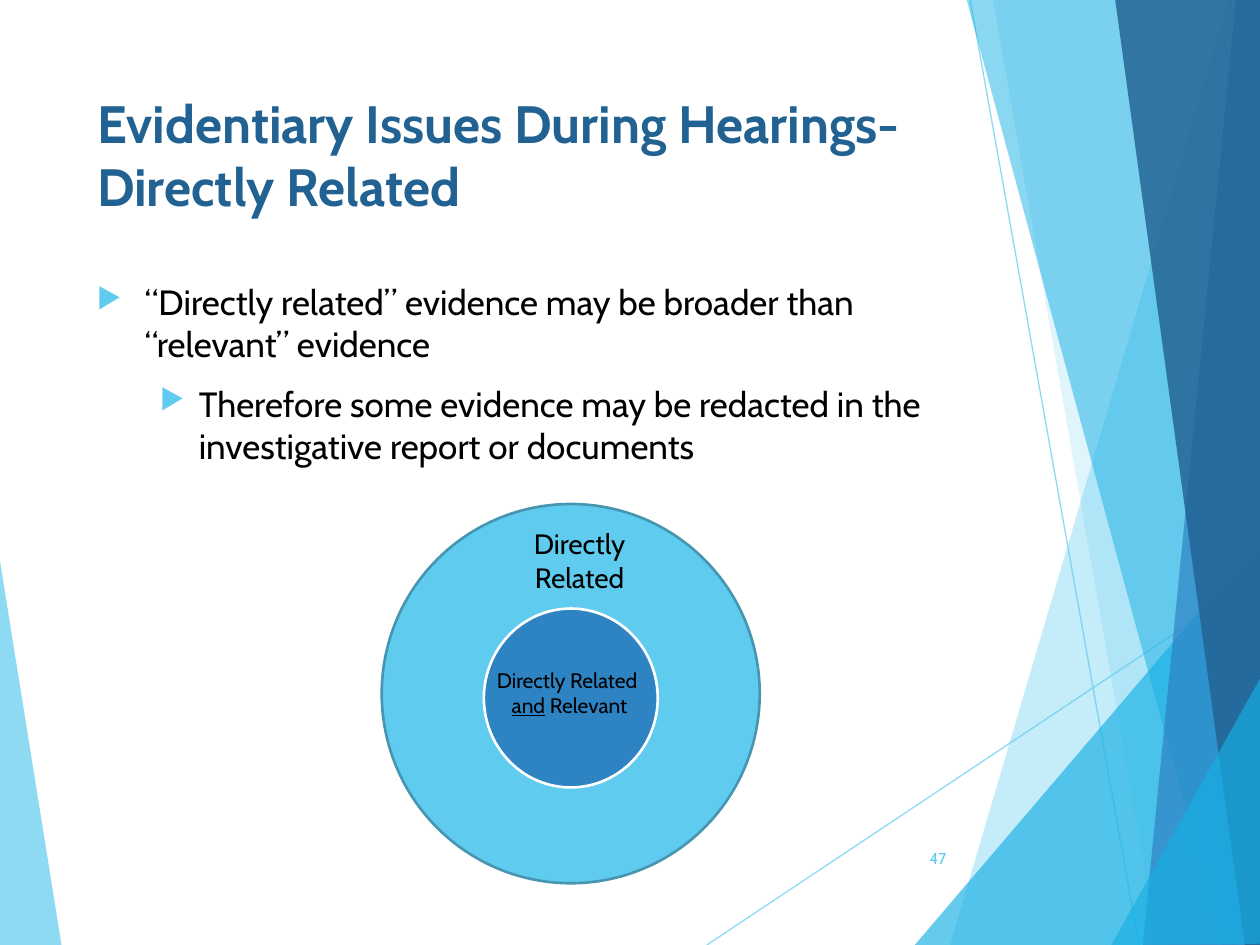
from typing import NamedTuple

from lxml import etree
from pptx import Presentation
from pptx.dml.color import RGBColor
from pptx.enum.shapes import MSO_CONNECTOR, MSO_SHAPE
from pptx.enum.text import MSO_ANCHOR, MSO_AUTO_SIZE, PP_ALIGN
from pptx.oxml.ns import qn
from pptx.util import Inches, Pt

LEFT, CENTER, RIGHT = PP_ALIGN.LEFT, PP_ALIGN.CENTER, PP_ALIGN.RIGHT
TOP, MIDDLE = MSO_ANCHOR.TOP, MSO_ANCHOR.MIDDLE
NO_FIT, GROW = MSO_AUTO_SIZE.NONE, MSO_AUTO_SIZE.SHAPE_TO_FIT_TEXT
CIRCLE = MSO_SHAPE.FLOWCHART_CONNECTOR
STRAIGHT = MSO_CONNECTOR.STRAIGHT

FONT = "Cabin"
COLORS = {
    "sky": "5FCBEF",
    "cyan": "17B0E4",
    "blue": "2E83C3",
    "navy": "226292",
    "rim": "4696B1",
    "black": "000000",
    "white": "FFFFFF",
}


class Facet(NamedTuple):
    points: list
    color: str
    opacity: int


class Ray(NamedTuple):
    start: tuple
    end: tuple


class Circle(NamedTuple):
    box: tuple
    fill: str
    line: str


class Bullet(NamedTuple):
    text: str
    level: int
    margin: float
    hanging: float


FACETS = [
    Facet([(-0.01, 4.39), (0.49, 7.51), (-0.01, 7.5)], "sky", 70),
    Facet([(9.75, 0), (7.54, 7.5), (10.02, 7.51), (10.01, 0.01)], "sky", 36),
    Facet([(7.88, -0.01), (9.19, 7.5), (10.01, 7.5), (10.01, -0.01)], "sky", 20),
    Facet([(7.26, 7.5), (10, 4.29), (10.01, 7.5)], "cyan", 66),
    Facet([(7.67, -0.01), (9.7, 7.5), (10.01, 7.49), (10.01, -0.01)], "cyan", 50),
    Facet([(9.81, -0.01), (9.07, 7.5), (10.01, 7.5), (10, -0.01)], "blue", 70),
    Facet([(8.85, -0.01), (9.88, 7.5), (10.02, 7.5), (10, -0.01)], "navy", 82),
    Facet([(8.82, 7.5), (10.02, 5.35), (10.02, 7.49)], "cyan", 66),
]
RAYS = [Ray((5.61, 7.5), (10.01, 4.57)), Ray((7.7, 0), (9.04, 7.5))]
CIRCLES = [
    Circle((3.03, 4, 3, 3.01), "sky", "rim"),
    Circle((3.84, 4.83, 1.38, 1.42), "blue", "white"),
]
BULLETS = [
    Bullet("“Directly related” evidence may be broader than “relevant” evidence",
           0, 0.38, 0.38),
    Bullet("Therefore some evidence may be redacted in the investigative report "
           "or documents", 1, 0.81, 0.31),
]


def rgb(name: str) -> RGBColor:
    return RGBColor.from_string(COLORS[name])


def set_opacity(element, percent: int) -> None:
    color = element.find(".//" + qn("a:srgbClr"))
    etree.SubElement(color, qn("a:alpha"), val=str(percent * 1000))


def draw_facet(slide, facet: Facet) -> None:
    points = [(Inches(x), Inches(y)) for x, y in facet.points]
    builder = slide.shapes.build_freeform(*points[0])
    builder.add_line_segments(points[1:], close=True)
    sp = builder.convert_to_shape()
    sp.shadow.inherit = False
    sp.fill.solid()
    sp.fill.fore_color.rgb = rgb(facet.color)
    set_opacity(sp.fill._xPr, facet.opacity)
    sp.line.fill.background()


def draw_ray(slide, ray: Ray) -> None:
    ends = [Inches(v) for v in ray.start + ray.end]
    line = slide.shapes.add_connector(STRAIGHT, *ends)
    line.line.color.rgb = rgb("sky")
    line.line.width = Pt(0.75)
    sp_pr = line._element.spPr
    set_opacity(sp_pr, 70)
    etree.SubElement(sp_pr, qn("a:effectLst"))


def draw_circle(slide, circle: Circle) -> None:
    sp = slide.shapes.add_shape(CIRCLE, *map(Inches, circle.box))
    sp.shadow.inherit = False
    sp.fill.solid()
    sp.fill.fore_color.rgb = rgb(circle.fill)
    sp.line.color.rgb = rgb(circle.line)
    sp.line.width = Pt(1.5)


def write(tf, paragraphs: list, *, size: float, color: str = "black",
          bold: bool = False, align=LEFT, anchor=TOP, fit=NO_FIT) -> None:
    """Fill a text frame; each paragraph is a list of (text, underlined) runs."""
    tf.word_wrap = True
    tf.auto_size = fit
    tf.vertical_anchor = anchor
    for i, runs in enumerate(paragraphs):
        p = tf.add_paragraph() if i else tf.paragraphs[0]
        p.alignment = align
        for text, underlined in runs:
            r = p.add_run()
            r.text = text
            r.font.name = FONT
            r.font.size = Pt(size)
            r.font.bold = bold
            r.font.underline = underlined
            r.font.color.rgb = rgb(color)


def add_text(slide, box: tuple, paragraphs: list, **style):
    tf = slide.shapes.add_textbox(*map(Inches, box)).text_frame
    write(tf, paragraphs, **style)
    return tf


def format_bullet(p, bullet: Bullet) -> None:
    p.level = bullet.level
    p.space_before = Pt(10)
    p_pr = p._p.get_or_add_pPr()
    p_pr.set("marL", str(Inches(bullet.margin)))
    p_pr.set("indent", str(-Inches(bullet.hanging)))
    color = etree.SubElement(p_pr, qn("a:buClr"))
    etree.SubElement(color, qn("a:srgbClr"), val=COLORS["sky"])
    etree.SubElement(p_pr, qn("a:buSzPct"), val="80000")
    etree.SubElement(p_pr, qn("a:buChar"), char="▶")


def main() -> None:
    prs = Presentation()
    prs.slide_width, prs.slide_height = Inches(10), Inches(7.5)
    s = prs.slides.add_slide(prs.slide_layouts[5])

    # Faceted backdrop
    draw_facet(s, FACETS[0])
    for ray in RAYS:
        draw_ray(s, ray)
    for facet in FACETS[1:]:
        draw_facet(s, facet)

    # Title
    title = s.shapes.title
    title.left, title.top = Inches(0.67), Inches(0.67)
    title.width, title.height = Inches(7.33), Inches(1.44)
    write(title.text_frame,
          [[("Evidentiary Issues During Hearings- Directly Related", False)]],
          size=30, color="navy", bold=True)

    # Bulleted points
    tf = add_text(s, (0.67, 2.18, 6.94, 1.63),
                  [[(b.text, False)] for b in BULLETS], size=20)
    for p, bullet in zip(tf.paragraphs, BULLETS):
        format_bullet(p, bullet)

    # Slide number
    add_text(s, (7.05, 6.61, 0.56, 0.4), [[("47", False)]],
             size=9, color="sky", align=RIGHT, anchor=MIDDLE)

    # Nested circles and their labels
    for circle in CIRCLES:
        draw_circle(s, circle)
    add_text(s, (3.91, 4.13, 1.38, 0.64), [[("Directly Related", False)]],
             size=16, align=CENTER, fit=GROW)
    add_text(s, (3.73, 5.25, 1.58, 0.5),
             [[("Directly Related ", False)], [("and", True), (" Relevant", False)]],
             size=12, align=CENTER, fit=GROW)

    prs.save("out.pptx")


if __name__ == "__main__":
    main()
